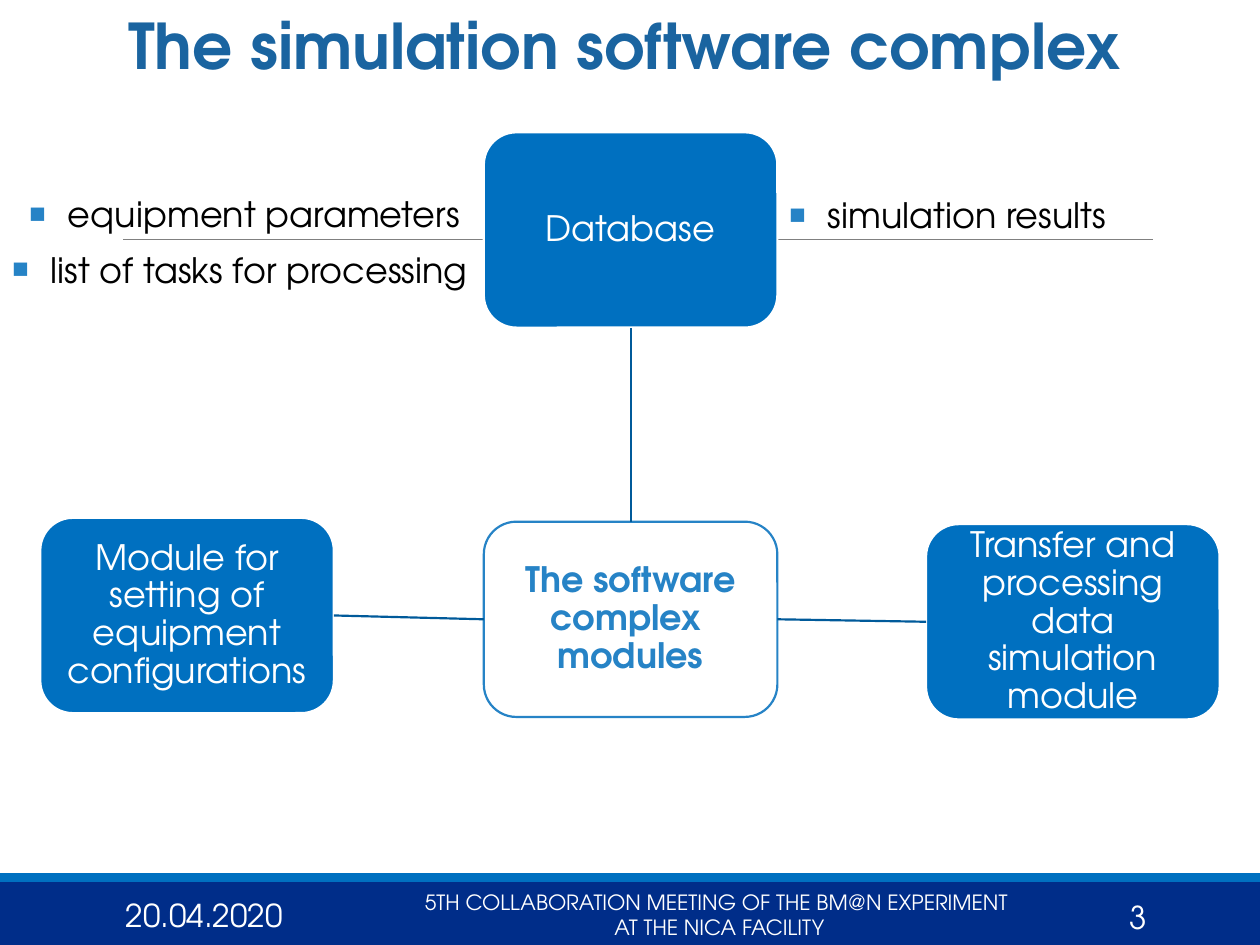
from dataclasses import dataclass
from lxml.etree import SubElement
from pptx import Presentation
from pptx.dml.color import RGBColor
from pptx.enum.shapes import MSO_CONNECTOR as Connector, MSO_SHAPE as Shape
from pptx.enum.text import MSO_ANCHOR as Anchor, PP_ALIGN as Align
from pptx.oxml.ns import qn
from pptx.slide import Slide
from pptx.util import Inches, Pt

NAVY = RGBColor(0x00, 0x2D, 0x89)
BLUE = RGBColor(0x00, 0x70, 0xC0)
LINK = RGBColor(0x00, 0x5A, 0x9A)
ACCENT = RGBColor(0x26, 0x83, 0xC6)
TITLE = RGBColor(0x1A, 0x64, 0xA0)
GRAY = RGBColor(0x80, 0x80, 0x80)
WHITE = RGBColor(0xFF, 0xFF, 0xFF)
BLACK = RGBColor(0x00, 0x00, 0x00)

COLUMNS, ROWS = 100, 75
NODE_WIDTH, NODE_HEIGHT = 23.3, 15.5
TOP, LEFT, BOTTOM, RIGHT = range(4)


@dataclass
class Painter:
    """Draws styled elements on a page divided into a grid of 100 by 75 cells."""

    page: Slide
    width: int
    height: int
    font: str = "TeX Gyre Adventor"

    def place(self, column, row):
        return round(column * self.width / COLUMNS), round(row * self.height / ROWS)

    def area(self, column, row, columns, rows):
        return *self.place(column, row), *self.place(columns, rows)

    def style(self, frame, size, color, bold=False, align=Align.LEFT, spacing=None):
        for para in frame.paragraphs:
            para.alignment = align
            if spacing:
                para.line_spacing = spacing
            for span in para.runs:
                span.font.name, span.font.size = self.font, Pt(size)
                span.font.bold, span.font.color.rgb = bold, color

    def band(self, row, rows, color):
        band = self.page.shapes.add_shape(Shape.RECTANGLE, *self.area(0, row, COLUMNS, rows))
        band.shadow.inherit = False
        band.fill.solid()
        band.fill.fore_color.rgb = color
        band.line.fill.background()

    def text(self, area, words, size, color, anchor=Anchor.MIDDLE, **look):
        box = self.page.shapes.add_textbox(*self.area(*area))
        frame = box.text_frame
        frame.word_wrap = True
        frame.vertical_anchor = anchor
        frame.text = words
        self.style(frame, size, color, **look)
        return frame

    def bullet(self, area, words):
        frame = self.text(area, words, 20, BLACK, anchor=Anchor.TOP)
        indent = Inches(0.31)
        props = frame.paragraphs[0]._p.get_or_add_pPr()
        props.set("marL", str(indent))
        props.set("indent", str(-indent))
        tint = SubElement(props, qn("a:buClr"))
        SubElement(tint, qn("a:srgbClr")).set("val", str(ACCENT))
        SubElement(props, qn("a:buFont")).set("typeface", self.font)
        SubElement(props, qn("a:buChar")).set("char", "▪")

    def node(self, column, row, words, fill=None, line=WHITE, color=WHITE, bold=False):
        node = self.page.shapes.add_shape(
            Shape.ROUNDED_RECTANGLE, *self.area(column, row, NODE_WIDTH, NODE_HEIGHT))
        node.shadow.inherit = False
        if fill is None:
            node.fill.background()
        else:
            node.fill.solid()
            node.fill.fore_color.rgb = fill
        node.line.color.rgb, node.line.width = line, Pt(1.25)
        frame = node.text_frame
        frame.word_wrap = True
        frame.vertical_anchor = Anchor.MIDDLE
        frame.margin_left = frame.margin_right = Inches(0.06)
        frame.margin_top = frame.margin_bottom = Inches(0.06)
        frame.text = words
        self.style(frame, 20, color, bold, Align.CENTER, 0.9)
        return node

    def line(self, start, end, color, weight):
        line = self.page.shapes.add_connector(
            Connector.STRAIGHT, *self.place(*start), *self.place(*end))
        line.line.color.rgb, line.line.width = color, Pt(weight)
        SubElement(line._element.spPr, qn("a:effectLst"))
        return line

    def link(self, first, first_side, second, second_side):
        link = self.line((0, 0), (0, 0), LINK, 1.25)
        link.begin_connect(first, first_side)
        link.end_connect(second, second_side)


def main():
    deck = Presentation()
    deck.slide_width, deck.slide_height = Inches(10), Inches(7.5)
    page = deck.slides.add_slide(deck.slide_layouts[6])
    painter = Painter(page, deck.slide_width, deck.slide_height)

    painter.band(70, 5, NAVY)
    painter.band(69.3, 0.7, BLUE)
    painter.line((9.8, 19), (91.5, 19), GRAY, 0.5)
    painter.text((9, 0, 82.5, 7.9), "The simulation software complex ", 36, TITLE,
                 bold=True, align=Align.CENTER, spacing=0.85)
    painter.text((9, 70.6, 15.3, 4), "20.04.2020", 18, WHITE)
    painter.text((87.1, 70.6, 4.9, 4.4), "3", 18, WHITE, align=Align.RIGHT)
    painter.text((30.2, 70.6, 53.8, 4),
                 "5TH COLLABORATION MEETING OF THE BM@N EXPERIMENT \nAT THE NICA FACILITY",
                 12, WHITE, align=Align.CENTER)

    center = painter.node(38.4, 41.4, "The software complex \vmodules",
                          line=ACCENT, color=ACCENT, bold=True)
    modules = (
        (38.4, 10.5, "Database", TOP, BOTTOM),
        (73.5, 41.6, "Transfer and processing data simulation module", RIGHT, LEFT),
        (3.2, 41.1, "Module for setting of equipment configurations", LEFT, RIGHT),
    )
    for column, row, words, center_side, module_side in modules:
        module = painter.node(column, row, words, fill=BLUE)
        painter.link(center, center_side, module, module_side)

    painter.bullet((61.6, 14.9, 28.4, 4.4), "simulation results")
    painter.bullet((1.3, 14.8, 36.7, 4.4), "equipment parameters")
    painter.bullet((-0.1, 19.2, 39.5, 4.4), "list of tasks for processing")
    deck.save("out.pptx")


if __name__ == "__main__":
    main()
